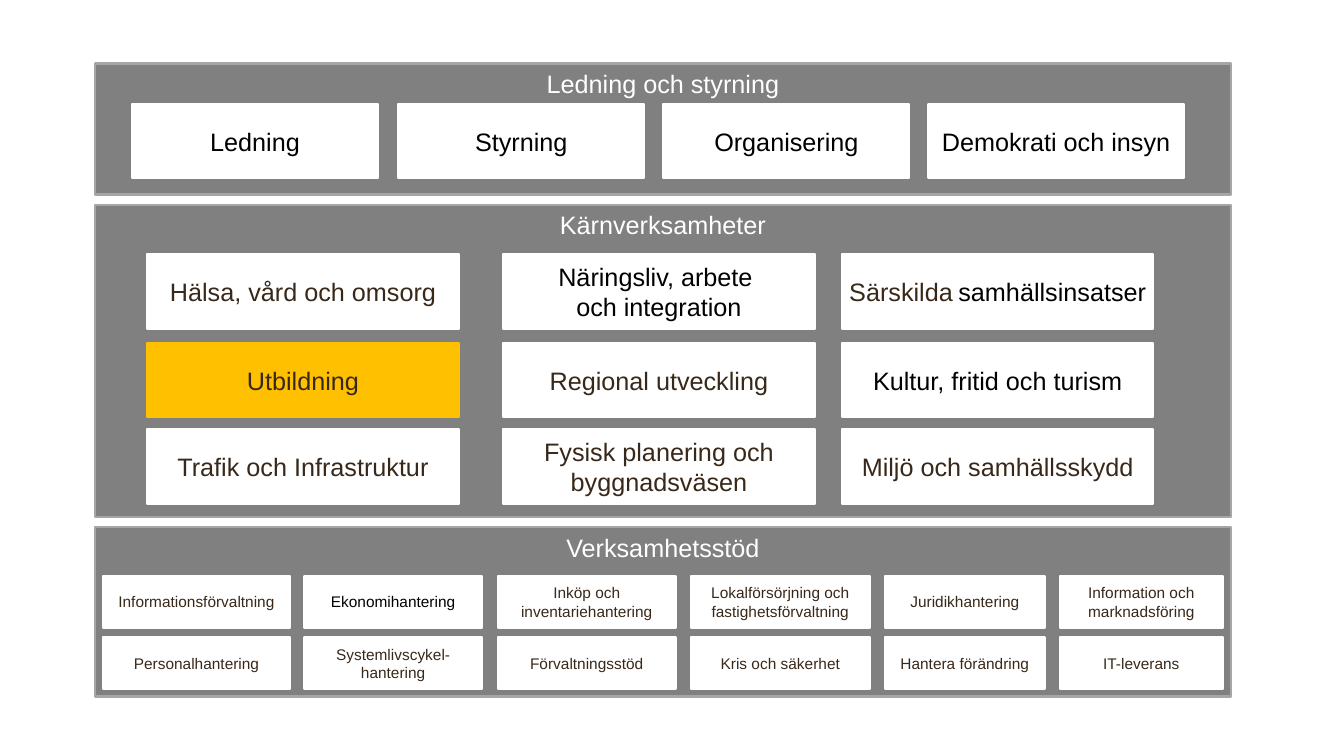
import pptx
import pptx.util
from pptx.dml.color import RGBColor
from pptx.enum.shapes import MSO_SHAPE
from pptx.enum.text import MSO_ANCHOR, PP_ALIGN

PX = 9144  # EMU per px, 100 px to the inch
GREY, LIGHT_GREY, WHITE, BLACK = "808080", "A6A6A6", "FFFFFF", "000000"
BROWN, AMBER = "382819", "FFC000"

prs = pptx.Presentation()
prs.slide_width, prs.slide_height = 1333 * PX, 750 * PX
s = prs.slides.add_slide(prs.slide_layouts[6])


def rgb(value):
    return RGBColor.from_string(value)


def box(x, y, w, h, text, color, fill=WHITE, line=WHITE, size=18,
        anchor=MSO_ANCHOR.MIDDLE, side=10):
    """Add a filled rectangle with centred text and return its text frame."""
    sp = s.shapes.add_shape(MSO_SHAPE.RECTANGLE, x * PX, y * PX, w * PX, h * PX)
    sp.shadow.inherit = False
    sp.fill.solid()
    sp.fill.fore_color.rgb = rgb(fill)
    sp.line.color.rgb = rgb(line)
    sp.line.width = pptx.util.Pt(1.5)
    tf = sp.text_frame
    tf.word_wrap = True
    tf.vertical_anchor = anchor
    tf.margin_left = tf.margin_right = side * PX
    p = tf.paragraphs[0]
    p.text = text
    p.alignment = PP_ALIGN.CENTER
    p.font.name = "Arial"
    p.font.size = pptx.util.Pt(size)
    p.font.color.rgb = rgb(color)
    return tf


# Section panels
for y, h, heading in [(63, 130, "Ledning och styrning"),
                      (203, 310, "Kärnverksamheter"),
                      (523, 168, "Verksamhetsstöd")]:
    box(94, y, 1127, h, heading, WHITE, GREY, LIGHT_GREY, anchor=MSO_ANCHOR.TOP)

# Management
for x, w, text in [(131, 244, "Ledning"), (395, 244, "Styrning"),
                   (658, 244, "Organisering"), (921, 253, "Demokrati och insyn")]:
    box(x, 103, w, 74, text, BLACK)

# Core activities
core_columns = [146, 499, 835]
core_rows = [
    (252, [("Hälsa, vård och omsorg", BROWN),
           ("Näringsliv, arbete \noch integration", BLACK)]),
    (340, [("Utbildning", BROWN), ("Regional utveckling", BROWN),
           ("Kultur, fritid och turism", BLACK)]),
    (426, [("Trafik och Infrastruktur", BROWN),
           ("Fysisk planering och byggnadsväsen", BROWN),
           ("Miljö och samhällsskydd", BROWN)]),
]
for y, cells in core_rows:
    for x, (text, color) in zip(core_columns, cells):
        fill = AMBER if text == "Utbildning" else WHITE
        box(x, y, 309, 74, text, color, fill, fill)

# The last cell of the first core row mixes colours and sizes
tf = box(core_columns[2], core_rows[0][0], 309, 74, "", BROWN, side=0)
for text, size, color in [("Särskilda", 18, BROWN), (" ", 14, BROWN),
                          ("samhällsinsatser", 18, BLACK)]:
    r = tf.paragraphs[0].add_run()
    r.text = text
    r.font.size = pptx.util.Pt(size)
    r.font.color.rgb = rgb(color)

# Support functions
support_columns = [
    (102, 186, "Informationsförvaltning", "Personalhantering"),
    (302, 176, "Ekonomihantering", "Systemlivscykel-hantering"),
    (494, 176, "Inköp och inventariehantering", "Förvaltningsstöd"),
    (685, 178, "Lokalförsörjning och fastighetsförvaltning", "Kris och säkerhet"),
    (878, 158, "Juridikhantering", "Hantera förändring"),
    (1051, 162, "Information och marknadsföring", "IT-leverans"),
]
for x, w, *texts in support_columns:
    for y, text in zip((571, 632), texts):
        color = BLACK if text == "Ekonomihantering" else BROWN
        box(x, y, w, 52, text, color, size=11, side=0)

prs.save("out.pptx")
